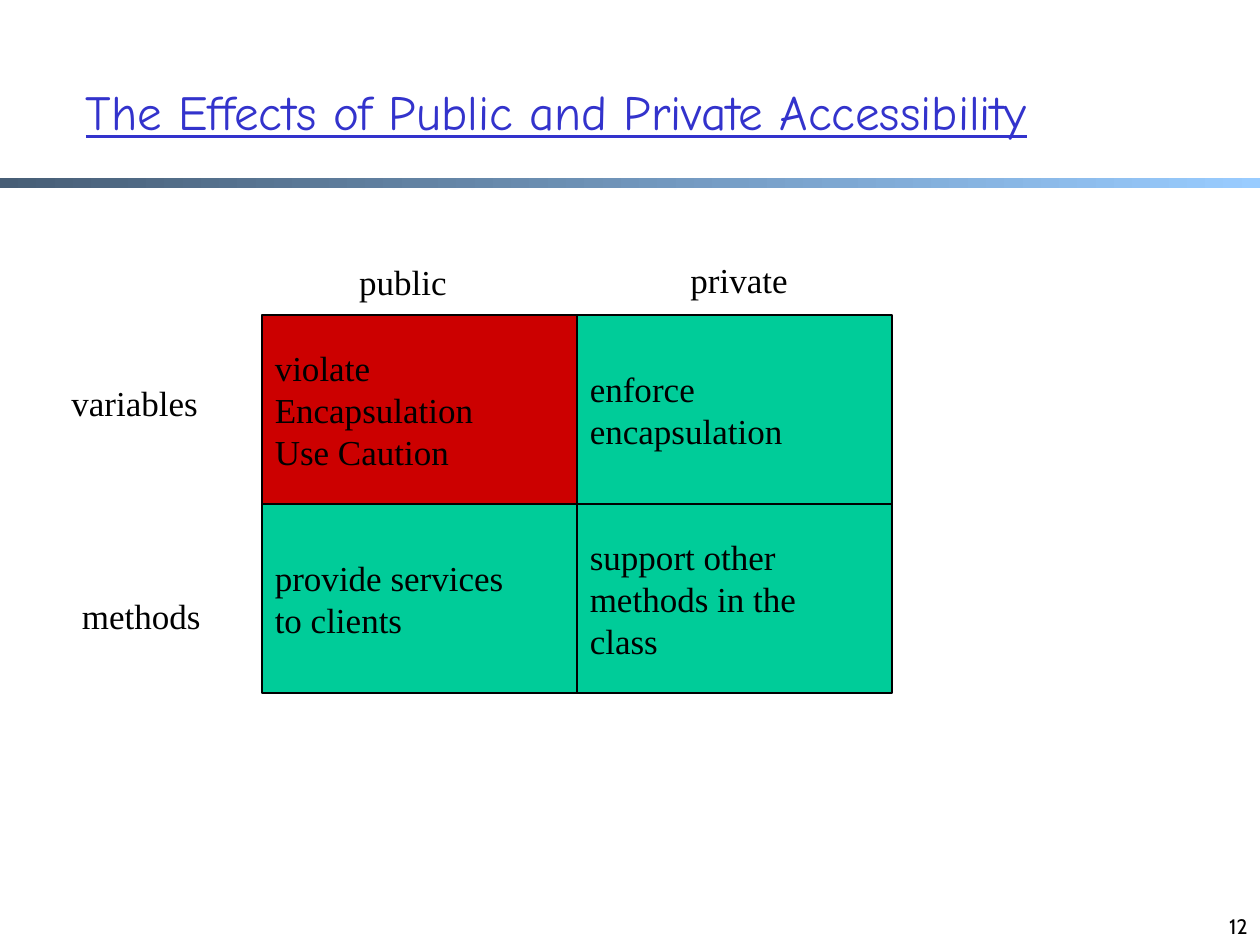
import pptx
import pptx.dml.color
import pptx.enum.dml
import pptx.enum.shapes
import pptx.enum.text
import pptx.oxml.ns
import pptx.util
from lxml import etree
from pptx.util import Cm

COLORS = {
    "text": "000000",
    "title": "3333CC",
    "caution": "CC0000",
    "good": "00CC99",
    "bar_start": "475E76",
    "bar_end": "99CCFF",
}
SERIF = "Times New Roman"
GRID_LEFT, GRID_TOP = 5.29, 6.35
CELL_WIDTH, CELL_HEIGHT = 6.35, 3.81
ALIGN = pptx.enum.text.PP_ALIGN
ANCHOR = pptx.enum.text.MSO_ANCHOR
RECTANGLE = pptx.enum.shapes.MSO_SHAPE.RECTANGLE

CELLS = [
    [("caution", ["violate", "Encapsulation", "Use Caution"]),
     ("good", ["enforce", "encapsulation"])],
    [("good", ["provide services", "to clients"]),
     ("good", ["support other", "methods in the", "class"])],
]
LABELS = [
    ("public", 6.99, 5.13, 2.4),
    ("private", 13.67, 5.08, 2.6),
    ("variables", 1.19, 7.57, 3.2),
    ("methods", 1.4, 11.86, 3.05),
]


def rgb(name):
    return pptx.dml.color.RGBColor.from_string(COLORS[name])


def write(box, lines, size=20, font=SERIF, color="text", align=ALIGN.LEFT,
          anchor=ANCHOR.MIDDLE, wrap=True, underline=None):
    frame = box.text_frame
    frame.word_wrap = wrap
    frame.vertical_anchor = anchor
    frame.text = "\n".join(lines)
    for para in frame.paragraphs:
        para.alignment = align
        para.font.name = font
        para.font.size = pptx.util.Pt(size)
        para.font.color.rgb = rgb(color)
        para.font.underline = underline


def add_text(page, left, top, width, height, text, **style):
    box = page.shapes.add_textbox(Cm(left), Cm(top), Cm(width), Cm(height))
    write(box, [text], **style)


def add_label(page, text, left, top, width):
    add_text(page, left, top, width, 1.1, text, anchor=ANCHOR.TOP)


def add_rectangle(page, left, top, width, height):
    box = page.shapes.add_shape(RECTANGLE, Cm(left), Cm(top), Cm(width), Cm(height))
    box.shadow.inherit = False
    return box


def add_bar(page):
    bar = add_rectangle(page, 0, 3.58, 25.4, 0.21)
    bar.line.fill.background()
    bar.fill.gradient()
    bar.fill.gradient_angle = 0
    for stop, name in zip(bar.fill.gradient_stops, ("bar_start", "bar_end")):
        stop.color.rgb = rgb(name)


def add_cell(page, row, column, color, lines):
    cell = add_rectangle(page, GRID_LEFT + column * CELL_WIDTH,
                         GRID_TOP + row * CELL_HEIGHT, CELL_WIDTH, CELL_HEIGHT)
    cell.fill.solid()
    cell.fill.fore_color.rgb = rgb(color)
    cell.line.color.rgb = rgb("text")
    cell.line.width = pptx.util.Pt(1)
    write(cell, lines)


def add_line(page, start, end):
    line = page.shapes.add_connector(
        pptx.enum.shapes.MSO_CONNECTOR.STRAIGHT,
        *(Cm(value) for value in (*start, *end)))
    line.line.color.rgb = rgb("text")
    line.line.width = pptx.util.Pt(1)
    etree.SubElement(line._element.spPr, pptx.oxml.ns.qn("a:effectLst"))


def main():
    deck = pptx.Presentation()
    deck.slide_width, deck.slide_height = Cm(25.4), Cm(19.05)
    page = deck.slides.add_slide(deck.slide_layouts[6])

    add_bar(page)
    add_text(page, 19.48, 17.78, 5.92, 1.27, "12", size=12, font="Cabin",
             align=ALIGN.RIGHT, anchor=ANCHOR.BOTTOM)
    add_text(page, 1.48, 0.64, 22.43, 3.18,
             "The Effects of Public and Private Accessibility",
             size=28, font="Comic Neue", color="title", underline=True)

    for row, cells in enumerate(CELLS):
        for column, (color, lines) in enumerate(cells):
            add_cell(page, row, column, color, lines)
    for label in LABELS:
        add_label(page, *label)

    middle_x, middle_y = GRID_LEFT + CELL_WIDTH, GRID_TOP + CELL_HEIGHT
    add_line(page, (GRID_LEFT, middle_y), (middle_x + CELL_WIDTH, middle_y))
    add_line(page, (middle_x, GRID_TOP), (middle_x, middle_y + CELL_HEIGHT))

    deck.save("out.pptx")


if __name__ == "__main__":
    main()
